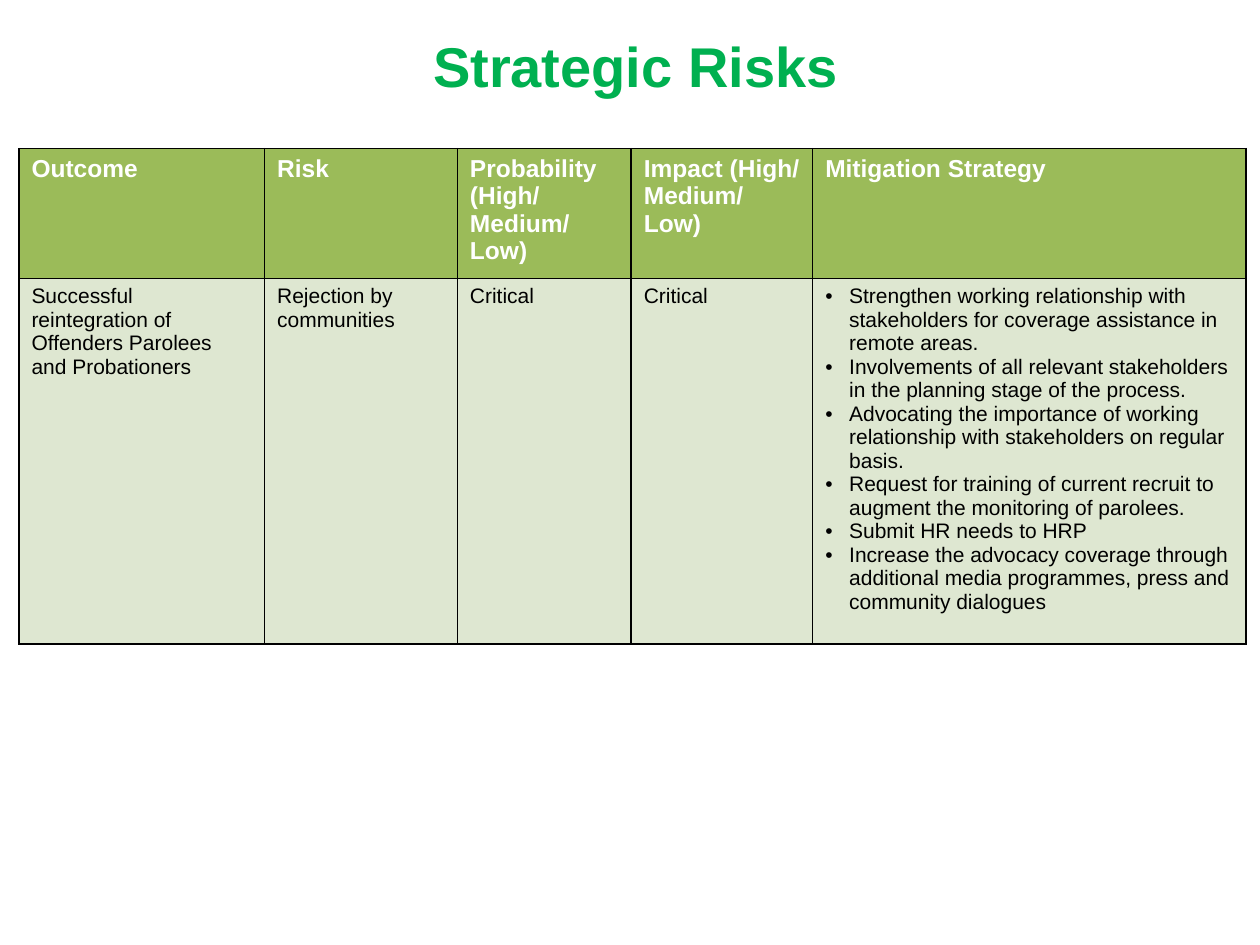
from dataclasses import dataclass
from typing import Any

from lxml.etree import SubElement
from pptx import Presentation
from pptx.dml.color import RGBColor
from pptx.enum.text import MSO_ANCHOR, PP_ALIGN
from pptx.oxml.ns import qn
from pptx.util import Inches, Pt


@dataclass(frozen=True)
class Theme:
    face: str = "Arial"
    title: str = "00B050"
    head: str = "9BBB59"
    body: str = "DEE7D1"
    light: str = "FFFFFF"
    dark: str = "000000"
    big: int = 32
    mid: int = 14
    small: int = 12


@dataclass(frozen=True)
class Style:
    size: int
    ink: str
    bold: bool
    fill: str = ""


@dataclass(frozen=True)
class Column:
    width: float
    head: str
    items: tuple[str, ...]
    listed: bool = False


THEME = Theme()
TITLE = Style(THEME.big, THEME.title, True)
HEAD = Style(THEME.mid, THEME.light, True, THEME.head)
BODY = Style(THEME.small, THEME.dark, False, THEME.body)
ROWS = (1.03, 2.9)
COLUMNS = (
    Column(1.95, "Outcome", (
        "Successful reintegration of Offenders Parolees and Probationers",)),
    Column(1.53, "Risk", ("Rejection by communities",)),
    Column(1.38, "Probability (High/ Medium/ Low)", ("Critical",)),
    Column(1.44, "Impact (High/ Medium/ Low)", ("Critical",)),
    Column(3.44, "Mitigation Strategy", (
        "Strengthen working relationship with stakeholders for coverage assistance in remote areas.",
        "Involvements of all relevant stakeholders in the planning stage of the process.",
        "Advocating the importance of working relationship with stakeholders on regular basis.",
        "Request for training of current recruit to augment the monitoring of parolees.",
        "Submit HR needs to HRP",
        "Increase the advocacy coverage through additional media programmes, press and community dialogues",
    ), True),
)


def apply(target: Any, values: dict[str, Any]) -> None:
    for name, value in values.items():
        setattr(target, name, value)


def write(frame: Any, items: tuple[str, ...], style: Style, listed: bool = False) -> None:
    frame.text = "\n".join(items)
    for para in frame.paragraphs:
        if listed:
            props = para._p.get_or_add_pPr()
            props.set("marL", str(Inches(0.19)))
            props.set("indent", str(Inches(-0.19)))
            SubElement(props, qn("a:buFont"), typeface=THEME.face)
            SubElement(props, qn("a:buChar"), char="•")
        for run in para.runs:
            apply(run.font, {"name": THEME.face, "size": Pt(style.size), "bold": style.bold})
            run.font.color.rgb = RGBColor.from_string(style.ink)


def border(cell: Any) -> None:
    props = cell._tc.get_or_add_tcPr()
    for side in ("lnL", "lnR", "lnT", "lnB"):
        line = SubElement(props, qn(f"a:{side}"), w=str(Pt(1)))
        fill = SubElement(line, qn("a:solidFill"))
        SubElement(fill, qn("a:srgbClr"), val=THEME.dark)


def draw_cell(cell: Any, items: tuple[str, ...], style: Style, listed: bool = False) -> None:
    border(cell)
    cell.fill.solid()
    cell.fill.fore_color.rgb = RGBColor.from_string(style.fill)
    write(cell.text_frame, items, style, listed)


def draw_title(shape: Any, text: str) -> None:
    apply(shape, {"left": Inches(0.32), "top": Inches(0.2),
                  "width": Inches(9.45), "height": Inches(0.64)})
    write(shape.text_frame, (text,), TITLE)
    apply(shape.text_frame, {"word_wrap": True, "vertical_anchor": MSO_ANCHOR.MIDDLE})
    shape.text_frame.paragraphs[0].alignment = PP_ALIGN.CENTER


def draw_table(slide: Any) -> None:
    width = sum(column.width for column in COLUMNS)
    table = slide.shapes.add_table(
        len(ROWS), len(COLUMNS), Inches(0.15), Inches(1.18),
        Inches(width), Inches(sum(ROWS))).table
    for row, height in zip(table.rows, ROWS):
        row.height = Inches(height)
    for index, column in enumerate(COLUMNS):
        table.columns[index].width = Inches(column.width)
        draw_cell(table.cell(0, index), (column.head,), HEAD)
        draw_cell(table.cell(1, index), column.items, BODY, column.listed)


def main() -> None:
    deck = Presentation()
    apply(deck, {"slide_width": Inches(10), "slide_height": Inches(7.5)})
    slide = deck.slides.add_slide(deck.slide_layouts[5])
    draw_title(slide.shapes.title, "Strategic Risks")
    draw_table(slide)
    deck.save("out.pptx")


if __name__ == "__main__":
    main()
